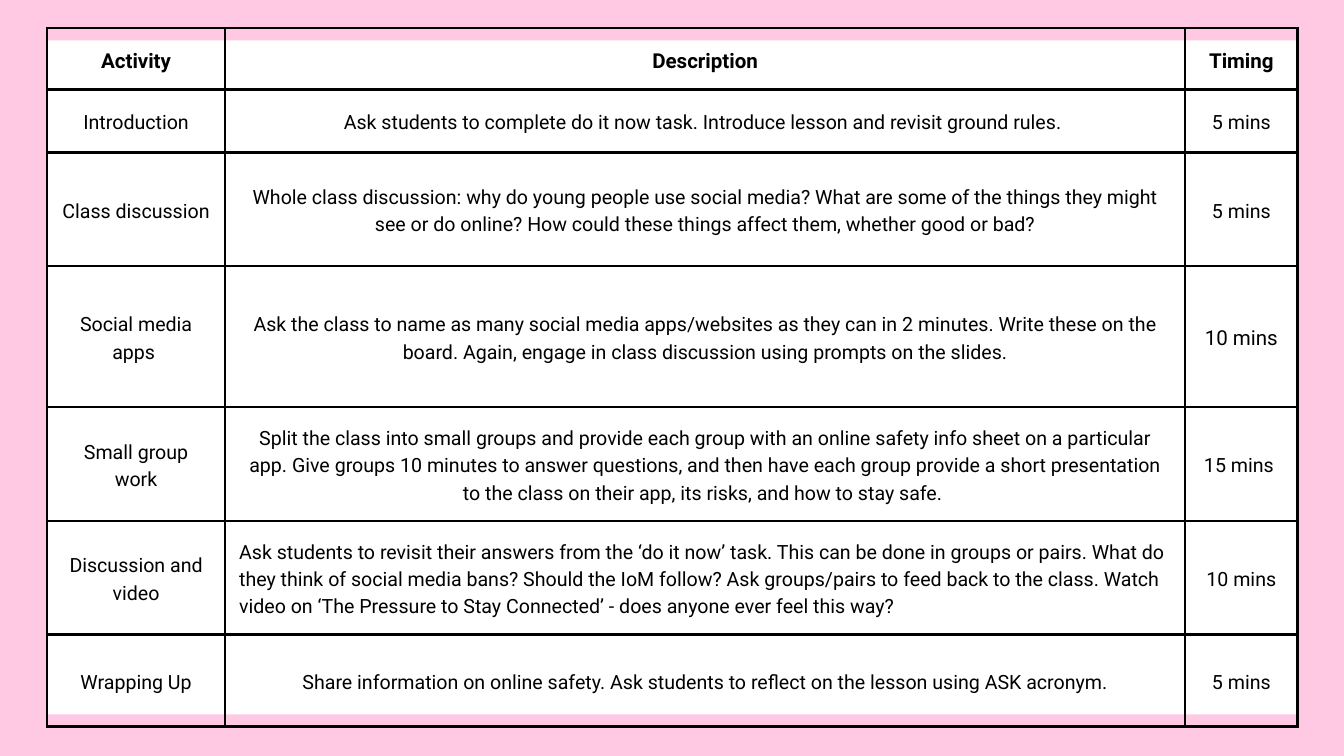
from dataclasses import dataclass

from lxml.etree import SubElement
from pptx import Presentation
from pptx.dml.color import RGBColor as Rgb
from pptx.enum.shapes import MSO_SHAPE as Shape
from pptx.enum.text import MSO_ANCHOR as Anchor, PP_ALIGN as Align
from pptx.oxml.ns import qn
from pptx.slide import Slide
from pptx.table import Table, _Cell as Cell
from pptx.util import Pt


@dataclass(frozen=True)
class Theme:
    font: str = "Roboto"
    pink: str = "FFC9E4"
    white: str = "FFFFFF"
    black: str = "000000"
    head: float = 22
    body: float = 21
    lead: float = 1.4  # line height as a share of the type size
    inset: float = 15
    rule: float = 3


@dataclass(frozen=True)
class Row:
    high: float
    task: str
    about: str
    time: str
    head: bool = False
    align: Align = Align.CENTER  # of the description
    clock: float = Theme.body  # type size of the timing


THEME = Theme()
WIDTH, HEIGHT = 1440, 810
LEFT, TOP = 50.4, 30.24
COLS = (190.8, 1028.5, 120.6)
PAD = 13  # the table stands out above and below the panel

ROWS = (
    Row(65.5, "Activity", "Description", "Timing", head=True, clock=THEME.head),
    Row(67.7, "Introduction",
        "Ask students to complete do it now task. Introduce lesson and "
        "revisit ground rules. ", "5 mins"),
    Row(121.7, "Class discussion",
        "Whole class discussion: why do young people use social media? What "
        "are some of the things they might see or do online? How could these "
        "things affect them, whether good or bad?", "5 mins"),
    Row(151.2, "Social media apps ",
        "Ask the class to name as many social media apps/websites as they can "
        "in 2 minutes. Write these on the board. Again, engage in class "
        "discussion using prompts on the slides.", "10 mins", clock=THEME.head),
    Row(121.7, "Small group work",
        "Split the class into small groups and provide each group with a "
        "online safety info sheet on a particular app. Give groups 10 minutes "
        "to answer questions, and then have each group provide a short "
        "presentation to the class on their app, its risks, and how to stay "
        "safe. ".replace("a online", "an online"), "15 mins "),
    Row(121.7, "Discussion and video",
        "Ask students to revisit their answers from the ‘do it now’ task. "
        "This can be done in groups or pairs. What do they think of social "
        "media bans? Should the IoM follow? Ask groups/pairs to feed back to "
        "the class. Watch video on ‘The Pressure to Stay Connected’ - does "
        "anyone ever feel this way?", "10 mins", align=Align.LEFT),
    Row(98.6, "Wrapping Up",
        "Share information on online safety. Ask students to reflect on the "
        "lesson using ASK acronym.", "5 mins"),
)


def frame(cell: Cell) -> None:
    """Rule all four sides of a cell."""
    props = cell._tc.get_or_add_tcPr()
    for side in "LRTB":
        line = SubElement(props, qn(f"a:ln{side}"), w=str(Pt(THEME.rule)))
        fill = SubElement(line, qn("a:solidFill"))
        SubElement(fill, qn("a:srgbClr"), val=THEME.black)


def write(cell: Cell, text: str, size: float, bold: bool, align: Align) -> None:
    frame(cell)
    cell.fill.background()
    cell.vertical_anchor = Anchor.MIDDLE
    cell.margin_left = cell.margin_right = Pt(THEME.inset)
    cell.margin_top = cell.margin_bottom = Pt(THEME.inset)
    para = cell.text_frame.paragraphs[0]
    para.alignment = align
    para.line_spacing = Pt(size * THEME.lead)
    run = para.add_run()
    run.text = text
    run.font.name = THEME.font
    run.font.size = Pt(size)
    run.font.bold = bold
    run.font.color.rgb = Rgb.from_string(THEME.black)


def panel(slide: Slide, high: float) -> None:
    box = slide.shapes.add_shape(
        Shape.RECTANGLE, Pt(LEFT), Pt(TOP + PAD), Pt(sum(COLS)), Pt(high - 2 * PAD))
    box.shadow.inherit = False
    box.fill.solid()
    box.fill.fore_color.rgb = Rgb.from_string(THEME.white)
    box.line.fill.background()


def plan(slide: Slide, high: float) -> Table:
    table = slide.shapes.add_table(
        len(ROWS), len(COLS), Pt(LEFT), Pt(TOP), Pt(sum(COLS)), Pt(high)).table
    table.first_row = table.horz_banding = False
    for col, wide in zip(table.columns, COLS):
        col.width = Pt(wide)
    for line, row in zip(table.rows, ROWS):
        line.height = Pt(row.high)
        size = THEME.head if row.head else THEME.body
        task, about, time = line.cells
        write(task, row.task, size, row.head, Align.CENTER)
        write(about, row.about, size, row.head, row.align)
        write(time, row.time, row.clock, row.head, Align.CENTER)
    return table


def main() -> None:
    deck = Presentation()
    deck.slide_width, deck.slide_height = Pt(WIDTH), Pt(HEIGHT)
    slide = deck.slides.add_slide(deck.slide_layouts[6])

    # Pink ground
    ground = slide.background.fill
    ground.solid()
    ground.fore_color.rgb = Rgb.from_string(THEME.pink)

    # White panel, then the lesson plan on it
    high = sum(row.high for row in ROWS)
    panel(slide, high)
    plan(slide, high)
    deck.save("out.pptx")


if __name__ == "__main__":
    main()
